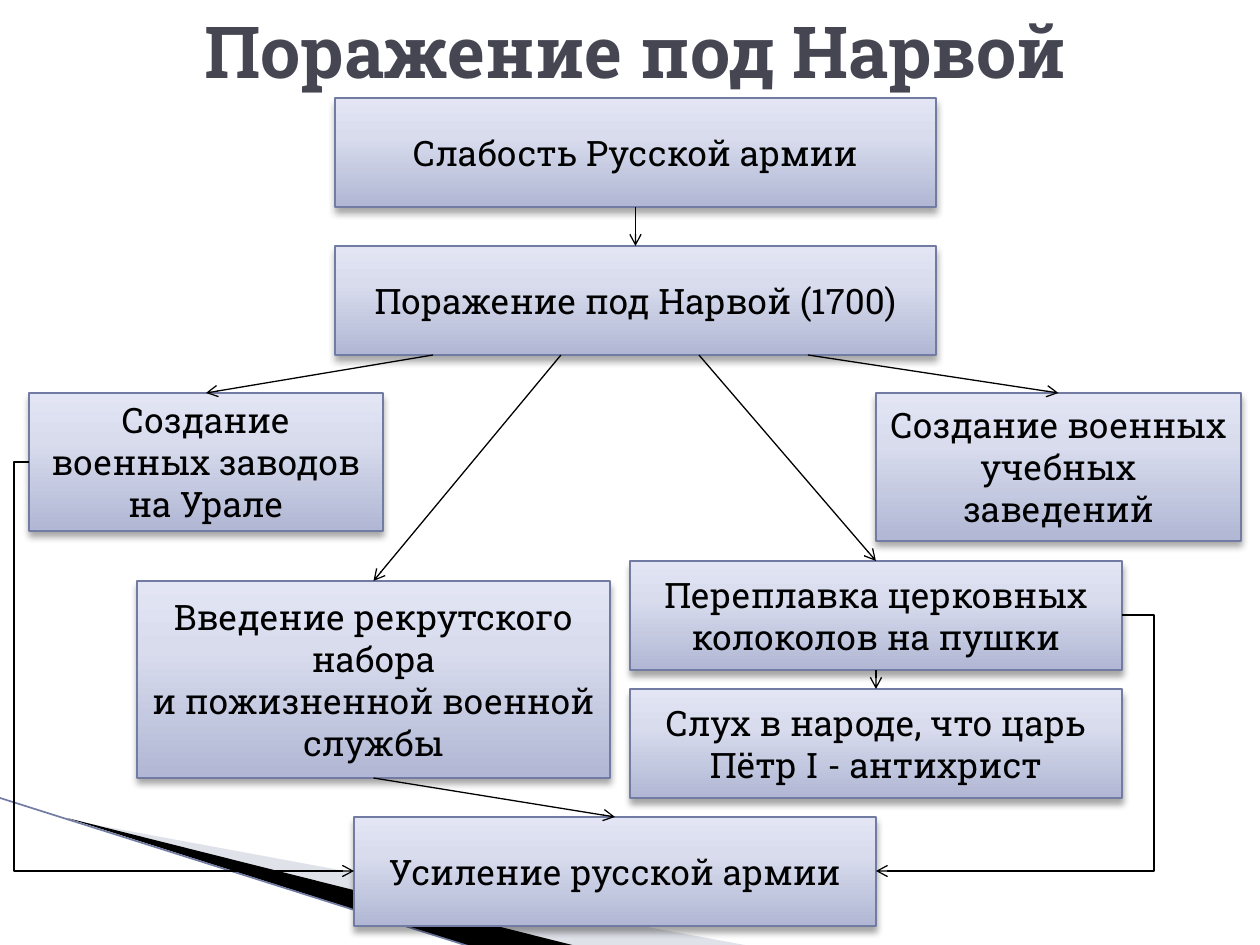
from lxml import etree
from pptx import Presentation
from pptx.dml.color import RGBColor
from pptx.enum.shapes import MSO_CONNECTOR, MSO_SHAPE
from pptx.enum.text import MSO_ANCHOR, PP_ALIGN
from pptx.oxml import parse_xml
from pptx.oxml.ns import qn
from pptx.util import Pt

PX = 914400 // 126
FONT = "Roboto Slab"
RECTANGLE = MSO_SHAPE.RECTANGLE
STRAIGHT, ELBOW = MSO_CONNECTOR.STRAIGHT, MSO_CONNECTOR.ELBOW
CENTER, MIDDLE = PP_ALIGN.CENTER, MSO_ANCHOR.MIDDLE
TOP, BOTTOM = 0, 2  # connection sites of a rectangle

TITLE = "Поражение под Нарвой"
# name: (text, left, top, width, height)
BOXES = {
    "weakness": ("Слабость Русской армии", 335, 98, 601, 109),
    "narva": ("Поражение под Нарвой (1700)", 335, 246, 601, 109),
    "recruits": ("Введение рекрутского набора\nи пожизненной военной службы",
                 137, 581, 473, 197),
    "schools": ("Создание военных учебных заведений", 876, 393, 365, 148),
    "bells": ("Переплавка церковных колоколов на пушки", 630, 561, 492, 109),
    "rumour": ("Слух в народе, что царь Пётр I - антихрист", 630, 689, 492, 109),
    "factories": ("Создание военных заводов на Урале", 29, 393, 354, 138),
    "stronger": ("Усиление русской армии", 354, 817, 522, 109),
}
# (from, to, start x on the bottom edge, or None for its middle)
ARROWS = [
    ("weakness", "narva", None),
    ("narva", "factories", 433),
    ("narva", "schools", 808),
    ("narva", "bells", 699),
    ("narva", "recruits", 561),
    ("recruits", "stronger", None),
    ("bells", "rumour", None),
]
# (from, to, side, x of the vertical stretch)
DETOURS = [("factories", "stronger", "left", 14),
           ("bells", "stronger", "right", 1154)]
# (colour, opacity in percent, corners)
WEDGES = [("B3B7CB", 40, [(69, 820), (750, 946), (575, 946)]),
          ("000000", 100, [(67, 818), (576, 946), (469, 946)])]
GRADIENT = [(0, "B1B7D4"), (65, "D8DCED"), (100, "E3E5F4")]
NAMESPACE = 'xmlns:a="http://schemas.openxmlformats.org/drawingml/2006/main"'


def color(value):
    return RGBColor.from_string(value)


def scaled(*lengths):
    return [length * PX for length in lengths]


def set_text(shape, text, size, text_color, bold=False):
    frame = shape.text_frame
    frame.word_wrap = True
    frame.vertical_anchor = MIDDLE
    paragraph = frame.paragraphs[0]
    paragraph.text = text
    paragraph.alignment = CENTER
    for run in paragraph.runs:
        run.font.name, run.font.size, run.font.bold = FONT, Pt(size), bold
        run.font.color.rgb = color(text_color)


def add_wedge(fill, opacity, corners):
    builder = slide.shapes.build_freeform(*corners[0], scale=PX)
    builder.add_line_segments(corners[1:])
    shape = builder.convert_to_shape()
    shape.shadow.inherit = False
    shape.line.fill.background()
    shape.fill.solid()
    shape.fill.fore_color.rgb = color(fill)
    tint = shape.fill._xPr.find(qn("a:solidFill"))[0]
    etree.SubElement(tint, qn("a:alpha")).set("val", str(opacity * 1000))


def add_box(text, *place):
    shape = slide.shapes.add_shape(RECTANGLE, *scaled(*place))
    properties = shape._element.spPr
    stops = "".join(f'<a:gs pos="{position * 1000}"><a:srgbClr val="{value}"/></a:gs>'
                    for position, value in GRADIENT)
    properties.append(parse_xml(
        f'<a:gradFill {NAMESPACE} rotWithShape="1"><a:gsLst>{stops}</a:gsLst>'
        '<a:lin ang="16200000" scaled="0"/></a:gradFill>'))
    shape.line.color.rgb = color("727CA3")
    shape.line.width = Pt(0.75)
    shape.shadow.inherit = False
    properties.find(qn("a:effectLst")).append(parse_xml(
        f'<a:outerShdw {NAMESPACE} blurRad="{Pt(4)}" dist="{Pt(3)}" dir="5400000" '
        'rotWithShape="0"><a:srgbClr val="000000"><a:alpha val="35000"/>'
        '</a:srgbClr></a:outerShdw>'))
    set_text(shape, text, 20, "000000")
    return shape


def add_line(kind, start, end, line_color="000000", width=0.75, arrow=True):
    line = slide.shapes.add_connector(kind, *scaled(*start, *end))
    line.line.color.rgb = color(line_color)
    line.line.width = Pt(width)
    if arrow:
        etree.SubElement(line.line._get_or_add_ln(), qn("a:tailEnd")).set("type", "arrow")
    etree.SubElement(line._element.spPr, qn("a:effectLst"))
    return line


presentation = Presentation()
presentation.slide_width, presentation.slide_height = scaled(1260, 945)
slide = presentation.slides.add_slide(presentation.slide_layouts[5])

# Title
title = slide.shapes.title
title.left, title.top, title.width, title.height = scaled(69, 0, 1134, 100)
set_text(title, TITLE, 41, "464653", bold=True)

# Corner decoration
for wedge in WEDGES:
    add_wedge(*wedge)
add_line(STRAIGHT, (0, 798), (468, 946), "727CA3", 0.95, arrow=False)

# Boxes
boxes = {name: add_box(*box) for name, box in BOXES.items()}

# Straight arrows, from a bottom edge to the middle of a top edge
for source, target, start_x in ARROWS:
    _, left, top, width, height = BOXES[source]
    _, target_left, target_top, target_width, _ = BOXES[target]
    arrow = add_line(STRAIGHT, (start_x or left + width // 2, top + height),
                     (target_left + target_width // 2, target_top))
    if start_x is None:
        arrow.begin_connect(boxes[source], BOTTOM)
    arrow.end_connect(boxes[target], TOP)

# Bent arrows around the outside
for source, target, side, bend_x in DETOURS:
    ends = []
    for name in (source, target):
        _, left, top, width, height = BOXES[name]
        ends.append((left + (width if side == "right" else 0), top + height // 2))
    (start_x, _), (end_x, _) = ends
    arrow = add_line(ELBOW, *ends)
    bend = round(100000 * (bend_x - start_x) / (end_x - start_x))
    guide = etree.SubElement(arrow._element.spPr.prstGeom.get_or_add_avLst(), qn("a:gd"))
    guide.set("name", "adj1")
    guide.set("fmla", f"val {bend}")

presentation.save("out.pptx")
